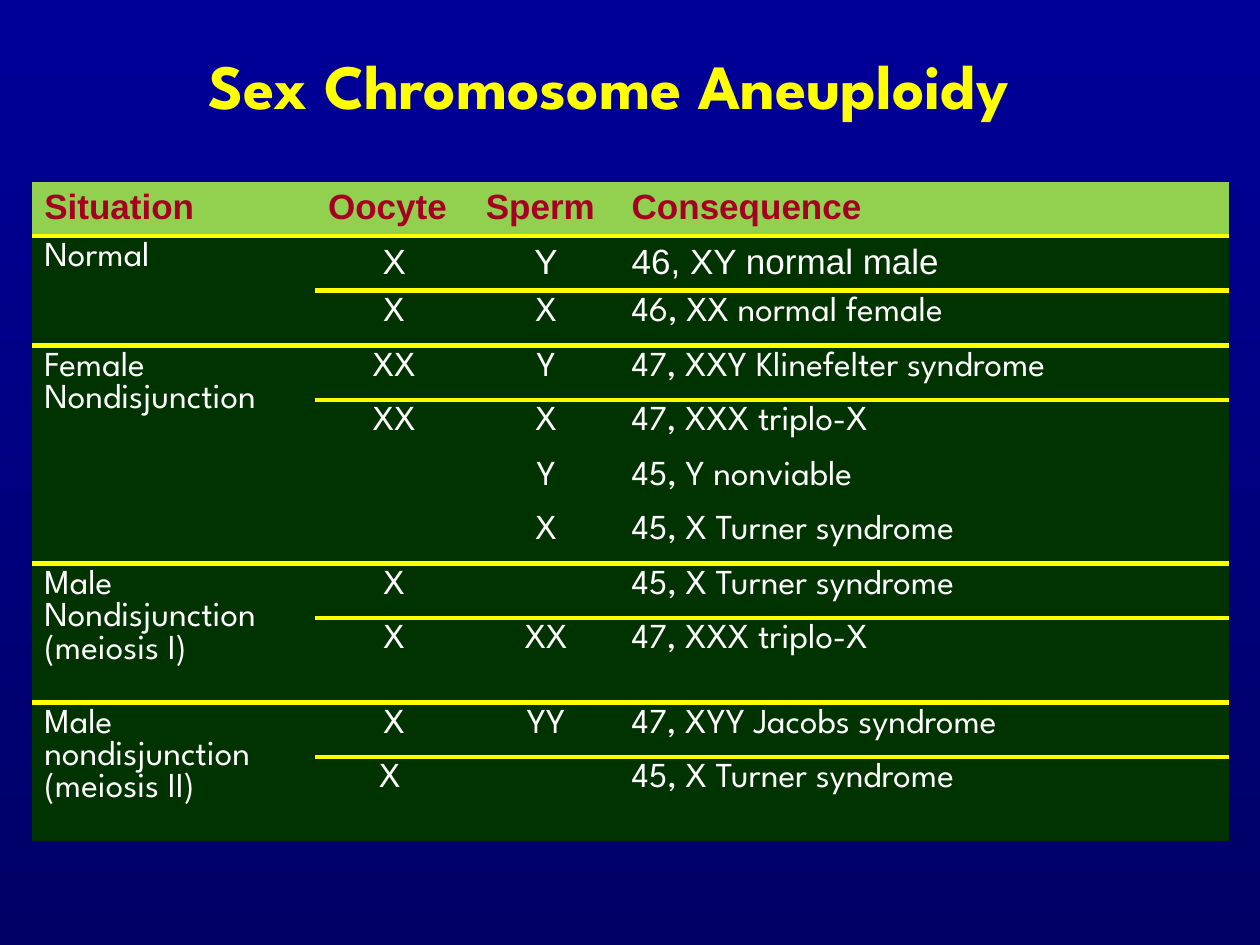
from dataclasses import dataclass

from lxml.etree import SubElement
from pptx import Presentation
from pptx.dml.color import RGBColor
from pptx.enum.text import MSO_ANCHOR, MSO_AUTO_SIZE, PP_ALIGN
from pptx.oxml import parse_xml
from pptx.oxml.ns import nsdecls, qn
from pptx.slide import Slide
from pptx.table import Table, _Cell
from pptx.util import Cm, Pt


@dataclass(frozen=True)
class Theme:
    background_top: str = "000099"
    background_bottom: str = "000066"
    accent: str = "FFFF00"
    header_fill: str = "92D050"
    header_text: str = "A50021"
    body_fill: str = "003300"
    body_text: str = "FFFFFF"
    display_font: str = "League Spartan"
    plain_font: str = "Arial"
    title_size: int = 36
    table_size: int = 20
    rule_width: int = 3
    no_grid_style: str = "{2D5ABB26-0587-4C30-8999-92F81FD0307C}"


@dataclass(frozen=True)
class Outcome:
    oocyte: str
    sperm: str
    consequence: str
    font: str
    height: float


@dataclass(frozen=True)
class Situation:
    name: str
    outcomes: tuple[Outcome, ...]


THEME = Theme()
ROW_HEIGHT, TALL_ROW_HEIGHT = 1.1, 1.7
COLUMN_WIDTHS = (5.72, 3.18, 2.94, 12.29)
HEADERS = ("Situation", "Oocyte", "Sperm", "Consequence")


def outcome(oocyte: str, sperm: str, consequence: str,
            font: str = THEME.display_font, height: float = ROW_HEIGHT) -> Outcome:
    return Outcome(oocyte, sperm, consequence, font, height)


SITUATIONS = (
    Situation("Normal", (
        outcome("X", "Y", "46, XY normal male", font=THEME.plain_font),
        outcome("X", "X", "46, XX normal female"),
    )),
    Situation("Female Nondisjunction", (
        outcome("XX", "Y", "47, XXY Klinefelter syndrome"),
        outcome("XX", "X", "47, XXX triplo-X"),
        outcome("", "Y", "45, Y nonviable"),
        outcome("", "X", "45, X Turner syndrome"),
    )),
    Situation("Male Nondisjunction (meiosis I)", (
        outcome("X", "", "45, X Turner syndrome"),
        outcome("X", "XX", "47, XXX triplo-X", height=TALL_ROW_HEIGHT),
    )),
    Situation("Male nondisjunction (meiosis II)", (
        outcome("X", "YY", "47, XYY Jacobs syndrome"),
        outcome("X ", "", "45, X Turner syndrome", height=TALL_ROW_HEIGHT),
    )),
)


def paint_background(slide: Slide) -> None:
    fill = slide.background.fill
    fill.gradient()
    fill.gradient_angle = 270
    colors = (THEME.background_top, THEME.background_bottom)
    for position, (stop, color) in enumerate(zip(fill.gradient_stops, colors)):
        stop.position = position
        stop.color.rgb = RGBColor.from_string(color)


def add_run(paragraph, text: str, font: str, size: int, color: str, bold: bool) -> None:
    run = paragraph.add_run()
    run.text = text
    run.font.name = font
    run.font.size = Pt(size)
    run.font.bold = bold
    run.font.color.rgb = RGBColor.from_string(color)


def add_title(slide: Slide, text: str) -> None:
    title = slide.shapes.title
    title.left, title.top, title.width, title.height = Cm(1.47), Cm(0.64), Cm(21.59), Cm(2.11)
    frame = title.text_frame
    frame.word_wrap = True
    frame.auto_size = MSO_AUTO_SIZE.NONE
    frame.vertical_anchor = MSO_ANCHOR.MIDDLE
    paragraph = frame.paragraphs[0]
    paragraph.alignment = PP_ALIGN.CENTER
    add_run(paragraph, text, THEME.display_font, THEME.title_size, THEME.accent, True)


def fill_cell(cell: _Cell, fill: str) -> None:
    cell.fill.solid()
    cell.fill.fore_color.rgb = RGBColor.from_string(fill)


def write_cell(cell: _Cell, text: str, font: str, color: str = THEME.body_text,
               bold: bool = False, centered: bool = False) -> None:
    """Write one paragraph with a space before of a fifth of a line."""
    if not text:
        return
    paragraph = cell.text_frame.paragraphs[0]
    paragraph.alignment = PP_ALIGN.CENTER if centered else PP_ALIGN.LEFT
    space_before = SubElement(paragraph._p.get_or_add_pPr(), qn("a:spcBef"))
    SubElement(space_before, qn("a:spcPct")).set("val", "20000")
    add_run(paragraph, text, font, THEME.table_size, color, bold)


def add_border(cell: _Cell, side: str) -> None:
    """Put a rule on side "T" or "B"; add B before T to keep the schema order."""
    line = parse_xml(
        f'<a:ln{side} {nsdecls("a")} w="{Pt(THEME.rule_width)}"><a:solidFill>'
        f'<a:srgbClr val="{THEME.accent}"/></a:solidFill></a:ln{side}>')
    cell._tc.get_or_add_tcPr().insert(0, line)


def rule_below(table: Table, row: int) -> None:
    for column in range(len(HEADERS)):
        add_border(table.cell(row, column), "B")
        add_border(table.cell(row + 1, column), "T")


def write_situation(table: Table, first_row: int, situation: Situation) -> None:
    last_row = first_row + len(situation.outcomes) - 1
    for row, result in enumerate(situation.outcomes, first_row):
        table.rows[row].height = Cm(result.height)
        for column in range(len(HEADERS)):
            fill_cell(table.cell(row, column), THEME.body_fill)
        write_cell(table.cell(row, 1), result.oocyte, result.font, centered=True)
        write_cell(table.cell(row, 2), result.sperm, result.font, centered=True)
        write_cell(table.cell(row, 3), result.consequence, result.font)
    name_cell = table.cell(first_row, 0)
    name_cell.merge(table.cell(last_row, 0))
    write_cell(name_cell, situation.name, THEME.display_font)
    if last_row + 1 < len(table.rows):
        add_border(name_cell, "B")
        rule_below(table, last_row)


def add_aneuploidy_table(slide: Slide) -> None:
    heights = [ROW_HEIGHT] + [item.height for group in SITUATIONS for item in group.outcomes]
    table = slide.shapes.add_table(
        len(heights), len(HEADERS), Cm(0.64), Cm(3.66),
        Cm(sum(COLUMN_WIDTHS)), Cm(sum(heights))).table
    table.first_row = table.horz_banding = False
    table._tbl.tblPr.find(qn("a:tableStyleId")).text = THEME.no_grid_style
    table.rows[0].height = Cm(ROW_HEIGHT)
    for index, (header, width) in enumerate(zip(HEADERS, COLUMN_WIDTHS)):
        table.columns[index].width = Cm(width)
        cell = table.cell(0, index)
        fill_cell(cell, THEME.header_fill)
        write_cell(cell, header, THEME.plain_font, THEME.header_text, bold=True)
    rule_below(table, 0)
    first_row = 1
    for situation in SITUATIONS:
        write_situation(table, first_row, situation)
        first_row += len(situation.outcomes)


def main() -> None:
    presentation = Presentation()
    presentation.slide_width, presentation.slide_height = Cm(25.4), Cm(19.05)
    slide = presentation.slides.add_slide(presentation.slide_layouts[5])
    paint_background(slide)
    add_title(slide, "Sex Chromosome Aneuploidy")
    add_aneuploidy_table(slide)
    presentation.save("out.pptx")


if __name__ == "__main__":
    main()
